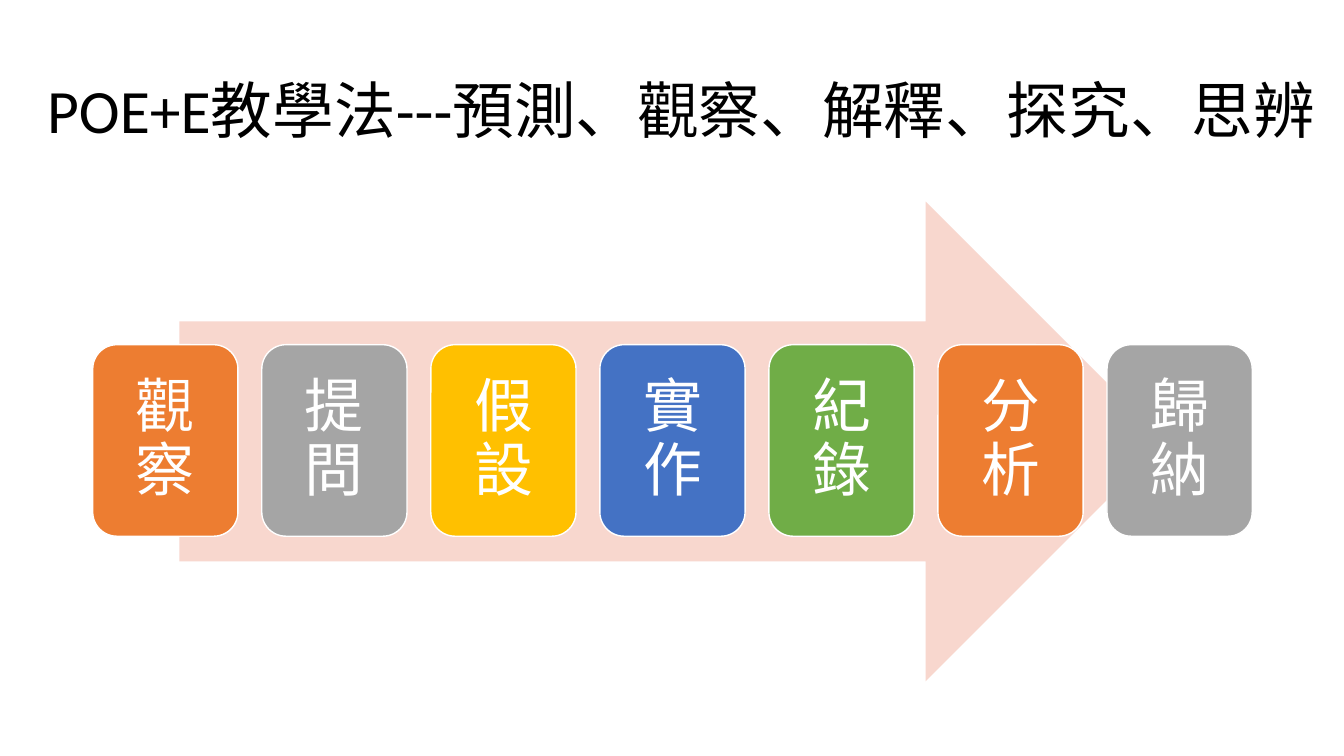
from dataclasses import dataclass

from pptx import Presentation
from pptx.dml.color import RGBColor
from pptx.enum.shapes import MSO_SHAPE
from pptx.enum.text import MSO_ANCHOR, PP_ALIGN
from pptx.shapes.autoshape import Shape
from pptx.slide import Slide
from pptx.util import Inches, Pt

ARROW = MSO_SHAPE.RIGHT_ARROW
ROUND = MSO_SHAPE.ROUNDED_RECTANGLE
MIDDLE = MSO_ANCHOR.MIDDLE
LEFT = PP_ALIGN.LEFT
CENTER = PP_ALIGN.CENTER


@dataclass(frozen=True)
class Theme:
    font: str = "Calibri"
    title: int = 44
    label: int = 42
    black: str = "000000"
    white: str = "FFFFFF"
    pale: str = "F8D7CE"
    orange: str = "ED7D31"
    gray: str = "A5A5A5"
    gold: str = "FFC000"
    blue: str = "4472C4"
    green: str = "70AD47"


@dataclass(frozen=True)
class Box:
    left: float
    top: float
    width: float
    height: float

    def spans(self) -> tuple:
        return tuple(map(Inches, (self.left, self.top, self.width, self.height)))


@dataclass(frozen=True)
class Step:
    label: str
    color: str


THEME = Theme()
TITLE = "POE+E教學法---預測、觀察、解釋、探究、思辨"
STEPS = [
    Step("觀察", THEME.orange),
    Step("提問", THEME.gray),
    Step("假設", THEME.gold),
    Step("實作", THEME.blue),
    Step("紀錄", THEME.green),
    Step("分析", THEME.orange),
    Step("歸納", THEME.gray),
]
FIRST, LAST = 0.92, 10.98
PITCH = (LAST - FIRST) / (len(STEPS) - 1)
INSET = Inches(0.17)
FRAME = {"word_wrap": True, "vertical_anchor": MIDDLE}
INSETS = {f"margin_{side}": INSET for side in ("left", "top", "right", "bottom")}


def apply(target: object, values: dict) -> None:
    for name, value in values.items():
        setattr(target, name, value)


def write(shape: Shape, text: str, size: int, color: str, align: PP_ALIGN, frame: dict) -> None:
    apply(shape.text_frame, frame)
    line = shape.text_frame.paragraphs[0]
    line.text = text
    apply(line, {"alignment": align, "line_spacing": 0.9})
    apply(line.font, {"name": THEME.font, "size": Pt(size)})
    line.font.color.rgb = RGBColor.from_string(color)


def draw_shape(slide: Slide, kind: MSO_SHAPE, box: Box, color: str) -> Shape:
    shape = slide.shapes.add_shape(kind, *box.spans())
    shape.shadow.inherit = False
    shape.fill.solid()
    shape.fill.fore_color.rgb = RGBColor.from_string(color)
    shape.line.fill.background()
    return shape


def draw_step(slide: Slide, step: Step, left: float) -> None:
    card = draw_shape(slide, ROUND, Box(left, 3.42, 1.44, 1.9), step.color)
    card.line.color.rgb = RGBColor.from_string(THEME.white)
    card.line.width = Pt(1)
    write(card, step.label, THEME.label, THEME.white, CENTER, FRAME | INSETS)


def main() -> None:
    deck = Presentation()
    apply(deck, {"slide_width": Inches(13.33), "slide_height": Inches(7.5)})
    slide = deck.slides.add_slide(deck.slide_layouts[6])
    title = slide.shapes.add_textbox(*Box(0.37, 0.4, 12.96, 1.45).spans())
    write(title, TITLE, THEME.title, THEME.black, LEFT, FRAME)
    draw_shape(slide, ARROW, Box(1.78, 2, 9.78, 4.76), THEME.pale)
    for index, step in enumerate(STEPS):
        draw_step(slide, step, FIRST + index * PITCH)
    deck.save("out.pptx")


if __name__ == "__main__":
    main()
